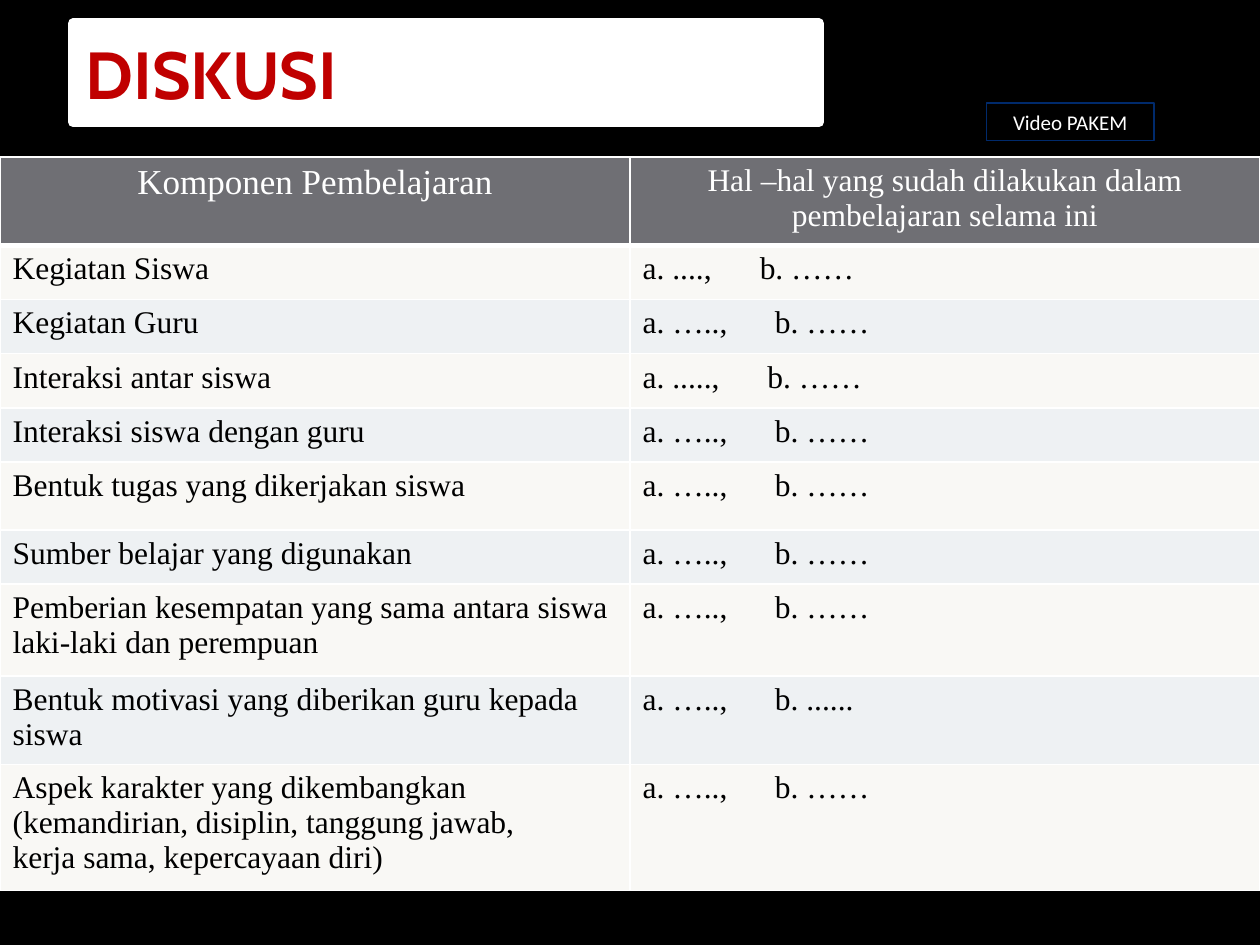
from dataclasses import dataclass

from lxml import etree
from pptx import Presentation
from pptx.dml.color import RGBColor
from pptx.enum.shapes import MSO_SHAPE
from pptx.enum.text import MSO_ANCHOR, PP_ALIGN
from pptx.oxml.ns import qn
from pptx.util import Inches, Pt

RECTANGLE = MSO_SHAPE.RECTANGLE
LEFT, CENTER = PP_ALIGN.LEFT, PP_ALIGN.CENTER
TOP, MIDDLE = MSO_ANCHOR.TOP, MSO_ANCHOR.MIDDLE
WIDTH, HEIGHT = Inches(10), Inches(7.5)


@dataclass(frozen=True)
class Theme:
    black: str = "000000"
    white: str = "FFFFFF"
    red: str = "C00000"
    navy: str = "002A6C"
    header: str = "6F6F74"
    bands: tuple = ("F9F8F5", "EEF1F3")
    title_font: str = "Cabin"
    label_font: str = "Calibri"
    table_font: str = "Times New Roman"
    title_size: float = 38
    header_size: float = 20
    body_size: float = 18
    label_size: float = 12


@dataclass(frozen=True)
class Box:
    """Edges as shares of the slide's width and height."""
    left: float
    top: float
    width: float
    height: float

    def lengths(self) -> tuple:
        return (int(WIDTH * self.left), int(HEIGHT * self.top),
                int(WIDTH * self.width), int(HEIGHT * self.height))


@dataclass(frozen=True)
class Component:
    """A table row; second_answer is the tab stop of answer b, in inches."""
    name: str
    height: float = 0.43
    first: str = "a. …..,"
    second: str = "b. ……"
    second_answer: float = 1.05


THEME = Theme()
TITLE_BOX = Box(0.058, 0.025, 0.592, 0.104)
LABEL_BOX = Box(0.783, 0.109, 0.133, 0.04)
TABLE_BOX = Box(0, 0.1663, 1, 0.775)
HEADER_HEIGHT = 0.7
HEADERS = (
    ("Komponen Pembelajaran", THEME.header_size),
    ("Hal –hal yang sudah dilakukan dalam pembelajaran selama ini", THEME.body_size),
)
COMPONENTS = (
    Component("Kegiatan Siswa", first="a. ....,", second_answer=0.93),
    Component("Kegiatan Guru"),
    Component("Interaksi antar siswa", first="a. .....,", second_answer=0.99),
    Component("Interaksi siswa dengan guru"),
    Component("Bentuk tugas yang dikerjakan siswa", 0.54),
    Component("Sumber belajar yang digunakan"),
    Component("Pemberian kesempatan yang sama antara siswa laki-laki dan perempuan", 0.73),
    Component("Bentuk motivasi yang diberikan guru kepada siswa", 0.7, second="b. ......"),
    Component("Aspek karakter yang dikembangkan (kemandirian, disiplin, tanggung jawab,\n"
              "kerja sama, kepercayaan diri)", 1.0),
)


def color(value: str) -> RGBColor:
    return RGBColor.from_string(value)


def write(frame, text: str, *, font: str, size: float, fill: str, bold: bool = False,
          align=LEFT, before: float = 0, tab: float = 0) -> None:
    """Fill a text frame, one paragraph a line, with an optional tab stop in inches."""
    frame.word_wrap = True
    frame.text = text
    for paragraph in frame.paragraphs:
        paragraph.alignment = align
        paragraph.space_before = Pt(before)
        if tab:
            stops = etree.SubElement(paragraph._p.get_or_add_pPr(), qn("a:tabLst"))
            etree.SubElement(stops, qn("a:tab"), pos=str(Inches(tab)), algn="l")
        for run in paragraph.runs:
            run.font.name = font
            run.font.size = Pt(size)
            run.font.bold = bold
            run.font.color.rgb = color(fill)


def add_box(slide, box: Box, *, fill: str, line: str, line_width: float):
    shape = slide.shapes.add_shape(RECTANGLE, *box.lengths())
    shape.shadow.inherit = False
    shape.fill.solid()
    shape.fill.fore_color.rgb = color(fill)
    shape.line.color.rgb = color(line)
    shape.line.width = Pt(line_width)
    shape.text_frame.vertical_anchor = MIDDLE
    return shape.text_frame


def style_cell(cell, fill: str, top: float = 1, bottom: float = 1) -> None:
    """Set the cell's fill and its white borders, widths in points."""
    cell.vertical_anchor = TOP
    properties = cell._tc.get_or_add_tcPr()
    for side, width in (("L", 1), ("R", 1), ("T", top), ("B", bottom)):
        border = etree.SubElement(properties, qn(f"a:ln{side}"), w=str(Pt(width)))
        solid = etree.SubElement(border, qn("a:solidFill"))
        etree.SubElement(solid, qn("a:srgbClr"), val=THEME.white)
    cell.fill.solid()
    cell.fill.fore_color.rgb = color(fill)


def add_component_table(slide) -> None:
    table = slide.shapes.add_table(
        len(COMPONENTS) + 1, len(HEADERS), *TABLE_BOX.lengths()).table
    table.rows[0].height = Inches(HEADER_HEIGHT)
    for column, (text, size) in enumerate(HEADERS):
        cell = table.cell(0, column)
        style_cell(cell, THEME.header, bottom=3)
        write(cell.text_frame, text, font=THEME.table_font, size=size,
              fill=THEME.white, align=CENTER)
    for row, component in enumerate(COMPONENTS, start=1):
        table.rows[row].height = Inches(component.height)
        answers = f"{component.first}\t{component.second}"
        texts = ((component.name, 0), (answers, component.second_answer))
        for column, (text, tab) in enumerate(texts):
            cell = table.cell(row, column)
            style_cell(cell, THEME.bands[(row - 1) % 2], top=3 if row == 1 else 1)
            write(cell.text_frame, text, font=THEME.table_font, size=THEME.body_size,
                  fill=THEME.black, tab=tab)


def main() -> None:
    presentation = Presentation()
    presentation.slide_width, presentation.slide_height = WIDTH, HEIGHT
    slide = presentation.slides.add_slide(presentation.slide_layouts[6])
    slide.background.fill.solid()
    slide.background.fill.fore_color.rgb = color(THEME.black)

    title = add_box(slide, TITLE_BOX, fill=THEME.white, line=THEME.white, line_width=6)
    write(title, "DISKUSI", font=THEME.title_font, size=THEME.title_size,
          fill=THEME.red, bold=True, before=4)
    add_component_table(slide)
    label = add_box(slide, LABEL_BOX, fill=THEME.black, line=THEME.navy, line_width=0.75)
    write(label, "Video PAKEM", font=THEME.label_font, size=THEME.label_size,
          fill=THEME.white, align=CENTER)
    presentation.save("out.pptx")


if __name__ == "__main__":
    main()
